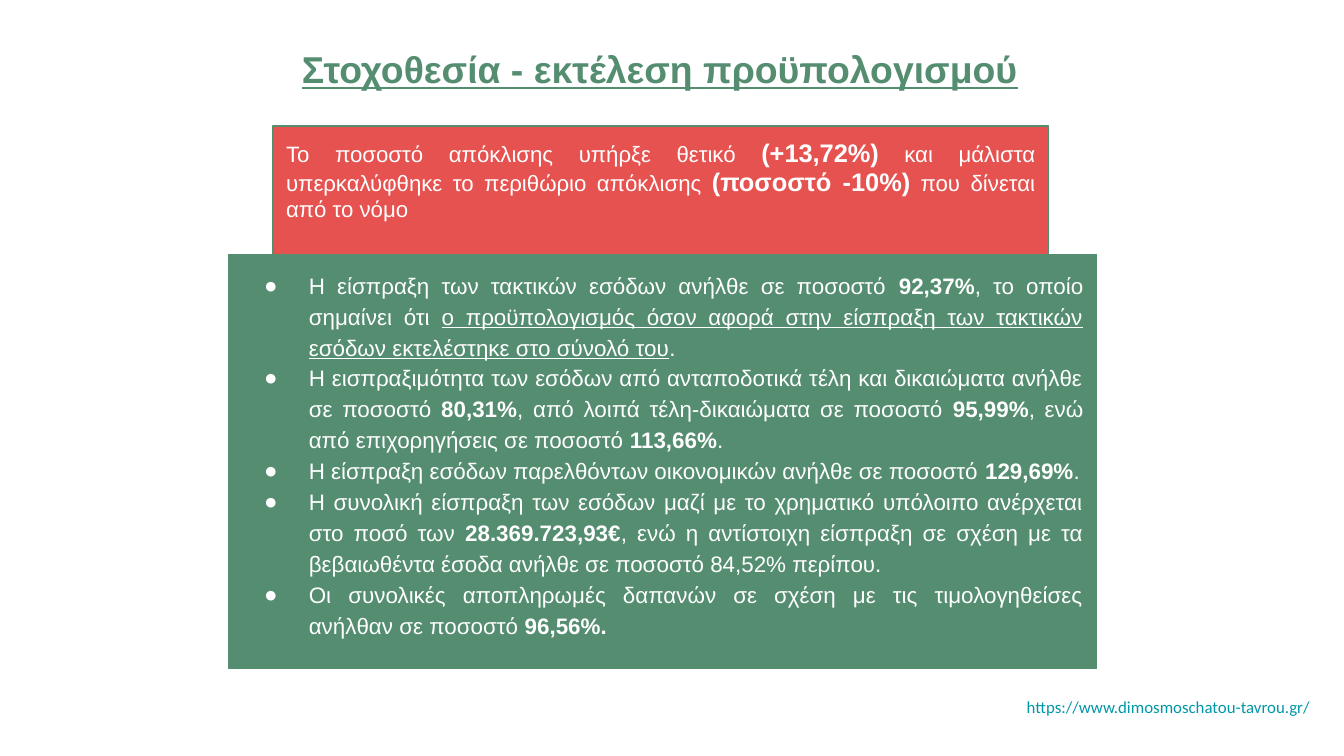
import pptx
import pptx.dml.color
import pptx.enum.shapes
import pptx.enum.text
import pptx.oxml
import pptx.oxml.ns
import pptx.util

Pt = pptx.util.Pt
ALIGN = pptx.enum.text.PP_ALIGN
GREEN = pptx.dml.color.RGBColor(0x54, 0x8D, 0x6F)
RED = pptx.dml.color.RGBColor(0xE6, 0x52, 0x4F)
WHITE = pptx.dml.color.RGBColor(0xFF, 0xFF, 0xFF)
TEAL = pptx.dml.color.RGBColor(0x00, 0x97, 0xA7)
INSET = 7.2

DEVIATION = [
    ("Το ποσοστό απόκλισης υπήρξε θετικό ", ""),
    ("(+13,72%)", "b"),
    (" και μάλιστα υπερκαλύφθηκε το περιθώριο απόκλισης ", ""),
    ("(ποσοστό -10%)", "b"),
    (" που δίνεται από το νόμο", ""),
]
RESULTS = [
    [
        ("Η είσπραξη των τακτικών εσόδων ανήλθε σε ποσοστό ", ""),
        ("92,37%", "b"),
        (", το οποίο σημαίνει ότι ", ""),
        ("ο προϋπολογισμός όσον αφορά στην είσπραξη των τακτικών "
         "εσόδων εκτελέστηκε στο σύνολό του", "u"),
        (".", ""),
    ],
    [
        ("Η εισπραξιμότητα των εσόδων από ανταποδοτικά τέλη και "
         "δικαιώματα ανήλθε σε ποσοστό ", ""),
        ("80,31%", "b"),
        (", από λοιπά τέλη-δικαιώματα σε ποσοστό ", ""),
        ("95,99%", "b"),
        (", ενώ από επιχορηγήσεις σε ποσοστό ", ""),
        ("113,66%", "b"),
        (".", ""),
    ],
    [
        ("Η είσπραξη εσόδων παρελθόντων οικονομικών ανήλθε σε ποσοστό ", ""),
        ("129,69%", "b"),
        (".", ""),
    ],
    [
        ("Η συνολική είσπραξη των εσόδων μαζί με το χρηματικό υπόλοιπο "
         "ανέρχεται στο ποσό των ", ""),
        ("28.369.723,93€", "b"),
        (", ενώ η αντίστοιχη είσπραξη σε σχέση με τα βεβαιωθέντα έσοδα "
         "ανήλθε σε ποσοστό 84,52% περίπου.", ""),
    ],
    [
        ("Οι συνολικές αποπληρωμές δαπανών σε σχέση με τις "
         "τιμολογηθείσες ανήλθαν σε ποσοστό ", ""),
        ("96,56%.", "b"),
    ],
]


def prepare_frame(frame, top_inset=INSET):
    """Wrap the text from the top of its box with even insets."""
    frame.word_wrap = True
    frame.vertical_anchor = pptx.enum.text.MSO_ANCHOR.TOP
    frame.margin_left = frame.margin_right = frame.margin_bottom = Pt(INSET)
    frame.margin_top = Pt(top_inset)
    return frame


def style_paragraph(paragraph, size, color, align, face="Arial"):
    """Set the font and alignment shared by a whole paragraph."""
    paragraph.alignment = align
    paragraph.font.size = Pt(size)
    paragraph.font.name = face
    paragraph.font.color.rgb = color


def add_runs(paragraph, pieces, bold_size=None):
    """Add text pieces, emphasising those marked b (bold) or u (underlined)."""
    for text, mark in pieces:
        run = paragraph.add_run()
        run.text = text
        if mark == "b":
            run.font.bold = True
            if bold_size:
                run.font.size = Pt(bold_size)
        elif mark == "u":
            run.font.underline = True


def add_bullet(paragraph):
    """Give the paragraph a hanging white bullet."""
    properties = paragraph._p.get_or_add_pPr()
    properties.set("marL", str(Pt(36)))
    properties.set("indent", str(Pt(-24)))
    namespace = pptx.oxml.ns.nsdecls("a")
    for xml in (
        f'<a:buClr {namespace}><a:srgbClr val="{WHITE}"/></a:buClr>',
        f'<a:buFont {namespace} typeface="Arial"/>',
        f'<a:buChar {namespace} char="●"/>',
    ):
        properties.append(pptx.oxml.parse_xml(xml))


def add_panel(slide, box, fill):
    """Draw a filled panel with a green edge and return its text frame."""
    panel = slide.shapes.add_shape(
        pptx.enum.shapes.MSO_SHAPE.RECTANGLE, *map(Pt, box))
    panel.shadow.inherit = False
    panel.fill.solid()
    panel.fill.fore_color.rgb = fill
    panel.line.color.rgb = GREEN
    panel.line.width = Pt(0.75)
    return prepare_frame(panel.text_frame)


def add_title(slide, box):
    """Place the underlined slide title."""
    title = slide.shapes.add_textbox(*map(Pt, box))
    heading = prepare_frame(title.text_frame, 9).paragraphs[0]
    heading.text = "Στοχοθεσία - εκτέλεση προϋπολογισμού"
    style_paragraph(heading, 20, GREEN, ALIGN.CENTER)
    heading.font.bold = True
    heading.font.underline = True


def add_deviation(slide, box):
    """Place the red panel on the deviation rate."""
    deviation = add_panel(slide, box, RED).paragraphs[0]
    style_paragraph(deviation, 11.9, WHITE, ALIGN.JUSTIFY)
    deviation.line_spacing = 0.95
    deviation.space_after = Pt(12)
    add_runs(deviation, DEVIATION, 13.6)


def add_results(slide, box):
    """Place the green panel with the bulleted results."""
    frame = add_panel(slide, box, GREEN)
    for index, pieces in enumerate(RESULTS):
        result = frame.add_paragraph() if index else frame.paragraphs[0]
        add_bullet(result)
        style_paragraph(result, 12, WHITE, ALIGN.JUSTIFY)
        result.line_spacing = 1.15
        add_runs(result, pieces)


def add_website(slide, box):
    """Place the web address at the lower right."""
    website = slide.shapes.add_textbox(*map(Pt, box))
    address = prepare_frame(website.text_frame).paragraphs[0]
    address.text = "https://www.dimosmoschatou-tavrou.gr/"
    style_paragraph(address, 9, TEAL, ALIGN.RIGHT, "Calibri")


def main():
    """Build and save the slide."""
    presentation = pptx.Presentation()
    presentation.slide_width = Pt(720)
    presentation.slide_height = Pt(405)
    slide = presentation.slides.add_slide(presentation.slide_layouts[6])
    add_title(slide, (139.7, 15.8, 427.7, 45.4))
    add_deviation(slide, (146.2, 67.5, 415.4, 74.2))
    add_website(slide, (472.3, 367.9, 236.2, 25.2))
    add_results(slide, (122.4, 136.3, 465.1, 221.8))
    presentation.save("out.pptx")


if __name__ == "__main__":
    main()
